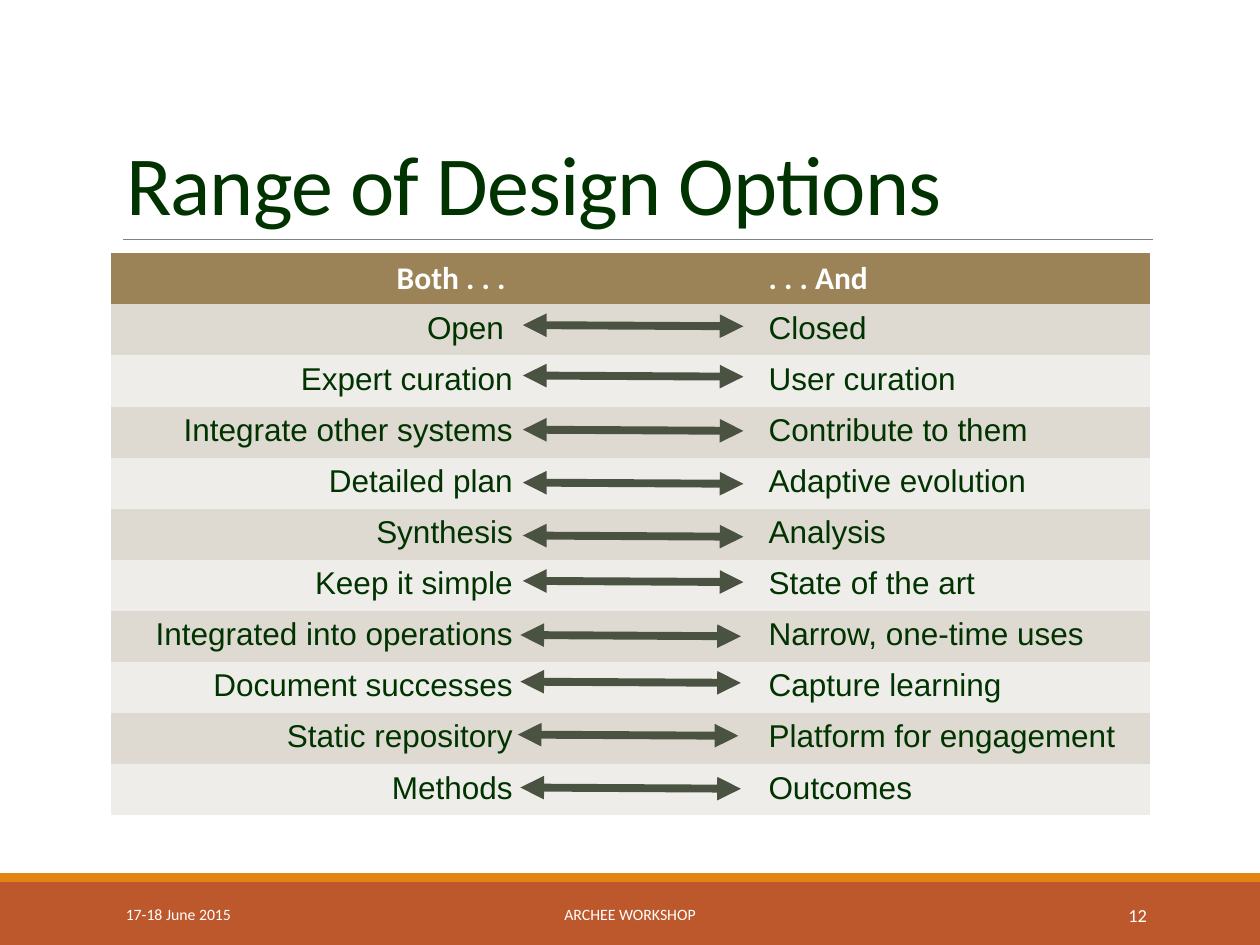
from dataclasses import dataclass

from lxml import etree
from pptx import Presentation
from pptx.dml.color import RGBColor
from pptx.enum.shapes import MSO_CONNECTOR, MSO_SHAPE
from pptx.enum.text import MSO_ANCHOR, MSO_AUTO_SIZE, PP_ALIGN
from pptx.oxml.ns import qn
from pptx.util import Pt

LEFT, CENTER, RIGHT = PP_ALIGN.LEFT, PP_ALIGN.CENTER, PP_ALIGN.RIGHT
MIDDLE, BOTTOM = MSO_ANCHOR.MIDDLE, MSO_ANCHOR.BOTTOM
NO_AUTOFIT = MSO_AUTO_SIZE.NONE
RECTANGLE, STRAIGHT = MSO_SHAPE.RECTANGLE, MSO_CONNECTOR.STRAIGHT
TITLE_ONLY = 5
PLAIN_TABLE_STYLE = "{2D5ABB26-0587-4C30-8999-92F81FD0307C}"


@dataclass(frozen=True)
class Theme:
    heading_font: str = "Calibri"
    body_font: str = "Arial"
    ink: str = "003300"
    white: str = "FFFFFF"
    rule: str = "808080"
    band: str = "BD582C"
    stripe: str = "E48312"
    header: str = "9B8357"
    row_fills: tuple = ("DED9D1", "EFEDEA")
    arrow: str = "4A5242"
    title_size: float = 48
    table_size: float = 18
    footer_size: float = 9
    number_size: float = 10.5


THEME = Theme()
HEADINGS = ("Both . . . ", ". . . And")
OPTIONS = [
    ("Open ", "Closed", 298.8, 185.76),
    ("Expert curation", "User curation", 298.8, 214.56),
    ("Integrate other systems", "Contribute to them", 298.8, 245.52),
    ("Detailed plan", "Adaptive evolution", 298.8, 275.76),
    ("Synthesis", "Analysis", 298.8, 306),
    ("Keep it simple", "State of the art", 298.8, 331.92),
    ("Integrated into operations", "Narrow, one-time uses", 297.36, 362.88),
    ("Document successes", "Capture learning", 297.36, 389.52),
    ("Static repository", "Platform for engagement", 295.92, 419.76),
    ("Methods", "Outcomes", 297.36, 450),
]
COLUMN_WIDTHS = (236.88, 131.76, 225.36)
ROW_HEIGHT = 29.2
ARROW_WIDTH, ARROW_DROP = 126, 0.72


def rgb(color):
    return RGBColor.from_string(color)


def style_paragraph(paragraph, size, color, family, align=LEFT, bold=False):
    paragraph.alignment = align
    font = paragraph.font
    font.size, font.name, font.bold = Pt(size), family, bold
    font.color.rgb = rgb(color)


def add_band(slide, top, height, color):
    band = slide.shapes.add_shape(RECTANGLE, 0, Pt(top), Pt(720), Pt(height))
    band.shadow.inherit = False
    band.fill.solid()
    band.fill.fore_color.rgb = rgb(color)
    band.line.fill.background()


def add_line(slide, start, end, color, width, arrowheads=False):
    line = slide.shapes.add_connector(STRAIGHT, *map(Pt, start + end))
    line.line.color.rgb = rgb(color)
    line.line.width = Pt(width)
    if arrowheads:
        outline = line.line._get_or_add_ln()
        for tag in ("a:headEnd", "a:tailEnd"):
            etree.SubElement(outline, qn(tag), type="triangle")
    etree.SubElement(line._element.spPr, qn("a:effectLst"))


def add_title(slide, text):
    title = slide.shapes.title
    title.left, title.top = Pt(64.8), Pt(26.64)
    title.width, title.height = Pt(594), Pt(110.16)
    frame = title.text_frame
    frame.text = text
    frame.word_wrap, frame.auto_size = True, NO_AUTOFIT
    frame.vertical_anchor = BOTTOM
    heading = frame.paragraphs[0]
    heading.line_spacing = 0.85
    style_paragraph(heading, THEME.title_size, THEME.ink, THEME.heading_font)
    heading.runs[0].font._element.set("spc", "-50")


def add_footer(slide, text, left, width, size, align):
    footer = slide.shapes.add_textbox(Pt(left), Pt(508.32), Pt(width), Pt(28.8))
    frame = footer.text_frame
    frame.word_wrap = True
    frame.vertical_anchor = MIDDLE
    frame.text = text
    style_paragraph(frame.paragraphs[0], size, THEME.white, THEME.heading_font, align)


def fill_row(row, texts, fill, color, family, bold=False):
    left_text, right_text = texts
    for cell, text, align in zip(row.cells, (left_text, "", right_text), (RIGHT, CENTER, LEFT)):
        cell.fill.solid()
        cell.fill.fore_color.rgb = rgb(fill)
        cell.text = text
        style_paragraph(cell.text_frame.paragraphs[0], THEME.table_size, color, family, align, bold)


def add_options_table(slide):
    row_count = len(OPTIONS) + 1
    table = slide.shapes.add_table(
        row_count, len(COLUMN_WIDTHS), Pt(63.36), Pt(144.72),
        Pt(sum(COLUMN_WIDTHS)), Pt(ROW_HEIGHT * row_count),
    ).table
    table._tbl.tblPr.find(qn("a:tableStyleId")).text = PLAIN_TABLE_STYLE
    for column, width in zip(table.columns, COLUMN_WIDTHS):
        column.width = Pt(width)
    for row in table.rows:
        row.height = Pt(ROW_HEIGHT)
    fill_row(table.rows[0], HEADINGS, THEME.header, THEME.white, THEME.heading_font, bold=True)
    for index, (both, also, _, _) in enumerate(OPTIONS):
        fill = THEME.row_fills[index % 2]
        fill_row(table.rows[index + 1], (both, also), fill, THEME.ink, THEME.body_font)


def main():
    deck = Presentation()
    deck.slide_width, deck.slide_height = Pt(720), Pt(540)
    slide = deck.slides.add_slide(deck.slide_layouts[TITLE_ONLY])

    add_band(slide, 504, 36, THEME.band)
    add_band(slide, 498.96, 5.04, THEME.stripe)
    add_line(slide, (70.56, 136.8), (658.8, 136.8), THEME.rule, 0.5)
    add_title(slide, "Range of Design Options")
    add_options_table(slide)
    add_footer(slide, "17-18 June 2015", 64.8, 146.16, THEME.footer_size, LEFT)
    add_footer(slide, "ARCHEE WORKSHOP", 217.44, 285.12, THEME.footer_size, CENTER)
    add_footer(slide, "12", 584.64, 77.76, THEME.number_size, RIGHT)
    for _, _, left, top in OPTIONS:
        end = (left + ARROW_WIDTH, top + ARROW_DROP)
        add_line(slide, (left, top), end, THEME.arrow, 4.5, arrowheads=True)

    deck.save("out.pptx")


if __name__ == "__main__":
    main()
